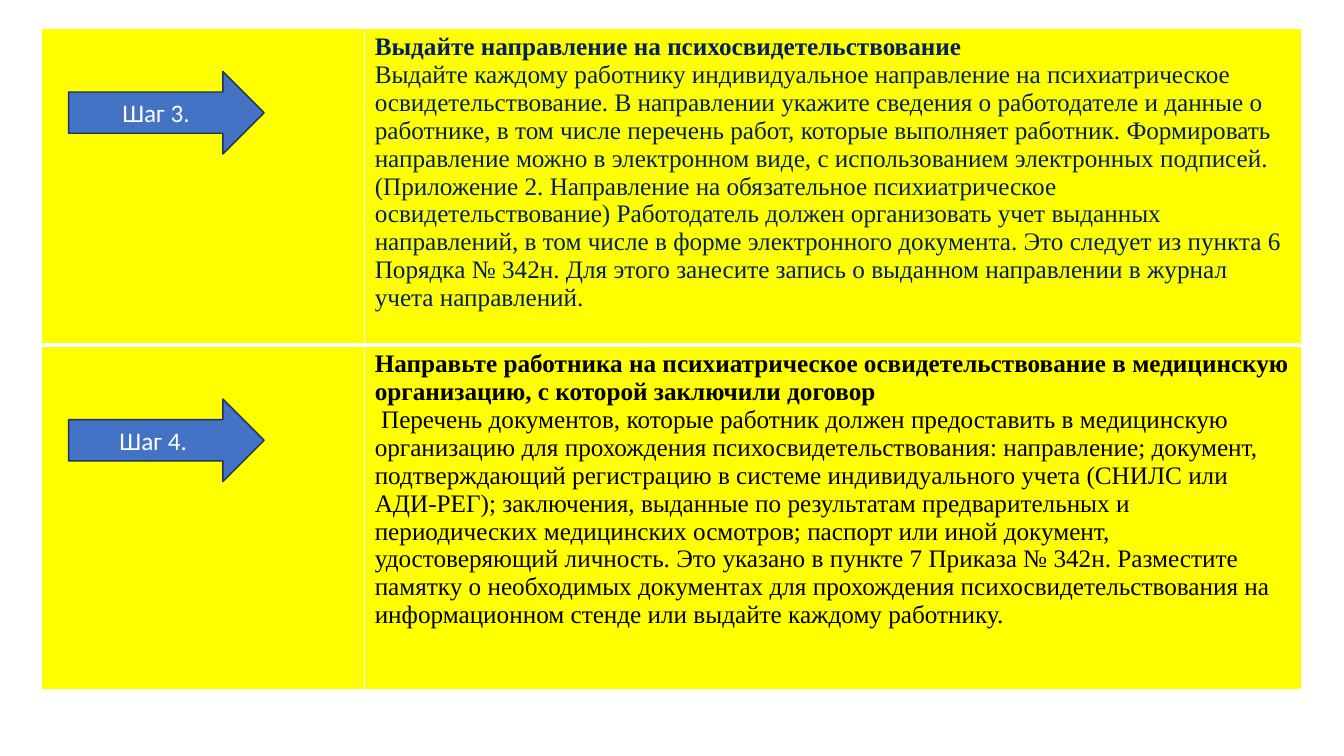
"""Build a slide with two steps of the psychiatric examination procedure."""
from dataclasses import dataclass

import lxml.etree
import pptx
import pptx.dml.color
import pptx.enum.shapes
import pptx.enum.text
import pptx.oxml.ns
import pptx.util

Pt = pptx.util.Pt


@dataclass(frozen=True)
class Theme:
    """Colours, fonts and type sizes of the slide."""
    cell: str = "FFFF00"
    border: str = "FFFFFF"
    arrow: str = "4472C4"
    arrow_line: str = "1E3256"
    arrow_text: str = "FFFFFF"
    body_font: str = "Times New Roman"
    arrow_font: str = "Calibri"
    text_size: int = 18
    thin_border: int = 1
    thick_border: int = 3


@dataclass(frozen=True)
class Step:
    """One table row with its arrow."""
    label: str
    heading: str
    details: str
    color: str
    row_height: float
    arrow_top: float


THEME = Theme()
TABLE_LEFT, TABLE_TOP = 29.5, 20
COLUMN_WIDTHS = (231, 669)
ARROW_LEFT, ARROW_WIDTH, ARROW_HEIGHT = 49, 139.7, 59

STEPS = (
    Step(
        "Шаг 3.",
        "Выдайте направление на психосвидетельствование",
        "Выдайте каждому работнику индивидуальное направление на психиатрическое "
        "освидетельствование. В направлении укажите сведения о работодателе и данные о "
        "работнике, в том числе перечень работ, которые выполняет работник. Формировать "
        "направление можно в электронном виде, с использованием электронных подписей. "
        "(Приложение 2. Направление на обязательное психиатрическое "
        "освидетельствование) Работодатель должен организовать учет выданных "
        "направлений, в том числе в форме электронного документа. Это следует из пункта 6 "
        "Порядка № 342н. Для этого занесите запись о выданном направлении в журнал "
        "учета направлений.",
        "002060", 226.5, 51,
    ),
    Step(
        "Шаг 4. ",
        "Направьте работника на психиатрическое освидетельствование в медицинскую "
        "организацию, с которой заключили договор",
        " Перечень документов, которые работник должен предоставить в медицинскую "
        "организацию для прохождения психосвидетельствования: направление; документ, "
        "подтверждающий регистрацию в системе индивидуального учета (СНИЛС или "
        "АДИ-РЕГ); заключения, выданные по результатам предварительных и "
        "периодических медицинских осмотров; паспорт или иной документ, "
        "удостоверяющий личность. Это указано в пункте 7 Приказа № 342н. Разместите "
        "памятку о необходимых документах для прохождения психосвидетельствования на "
        "информационном стенде или выдайте каждому работнику.",
        "000000", 245.8, 285,
    ),
)


def rgb(value):
    """Turn a hex string into a colour."""
    return pptx.dml.color.RGBColor.from_string(value)


def format_font(font, name, color, bold=False):
    """Set typeface, size, colour and weight."""
    font.name = name
    font.size = Pt(THEME.text_size)
    font.color.rgb = rgb(color)
    font.bold = bold


def set_borders(cell, widths):
    """Draw the left, right, top and bottom borders of a cell."""
    properties = cell._tc.get_or_add_tcPr()
    qn = pptx.oxml.ns.qn
    for position, (side, width) in enumerate(zip("LRTB", widths)):
        line = lxml.etree.Element(qn(f"a:ln{side}"), w=str(Pt(width)))
        fill = lxml.etree.SubElement(line, qn("a:solidFill"))
        lxml.etree.SubElement(fill, qn("a:srgbClr"), val=THEME.border)
        properties.insert(position, line)


def fill_cell_text(cell, step):
    """Write the bold heading and the details of a step."""
    cell.text = f"{step.heading}\n{step.details}"
    for paragraph, bold in zip(cell.text_frame.paragraphs, (True, False)):
        format_font(paragraph.font, THEME.body_font, step.color, bold)


def add_steps_table(slide, steps):
    """Add the table with one row for each step."""
    height = sum(step.row_height for step in steps)
    table = slide.shapes.add_table(
        len(steps), len(COLUMN_WIDTHS), Pt(TABLE_LEFT), Pt(TABLE_TOP),
        Pt(sum(COLUMN_WIDTHS)), Pt(height)).table
    table.first_row = table.horz_banding = False
    for column, width in zip(table.columns, COLUMN_WIDTHS):
        column.width = Pt(width)
    thin, thick = THEME.thin_border, THEME.thick_border
    for index, (row, step) in enumerate(zip(table.rows, steps)):
        row.height = Pt(step.row_height)
        top = thick if index else thin
        bottom = thick if index < len(steps) - 1 else thin
        for cell in row.cells:
            cell.fill.solid()
            cell.fill.fore_color.rgb = rgb(THEME.cell)
            set_borders(cell, (thin, thin, top, bottom))
        fill_cell_text(row.cells[1], step)


def add_step_arrow(slide, step):
    """Add the labelled arrow of a step."""
    arrow = slide.shapes.add_shape(
        pptx.enum.shapes.MSO_SHAPE.RIGHT_ARROW, Pt(ARROW_LEFT), Pt(step.arrow_top),
        Pt(ARROW_WIDTH), Pt(ARROW_HEIGHT))
    arrow.shadow.inherit = False
    arrow.fill.solid()
    arrow.fill.fore_color.rgb = rgb(THEME.arrow)
    arrow.line.color.rgb = rgb(THEME.arrow_line)
    arrow.line.width = Pt(1)
    arrow.text_frame.text = step.label
    arrow.text_frame.vertical_anchor = pptx.enum.text.MSO_ANCHOR.MIDDLE
    paragraph = arrow.text_frame.paragraphs[0]
    paragraph.alignment = pptx.enum.text.PP_ALIGN.CENTER
    format_font(paragraph.font, THEME.arrow_font, THEME.arrow_text)


def main():
    """Build and save the presentation."""
    presentation = pptx.Presentation()
    presentation.slide_width, presentation.slide_height = Pt(960), Pt(540)
    slide = presentation.slides.add_slide(presentation.slide_layouts[6])
    add_steps_table(slide, STEPS)
    for step in STEPS:
        add_step_arrow(slide, step)
    presentation.save("out.pptx")


if __name__ == "__main__":
    main()
